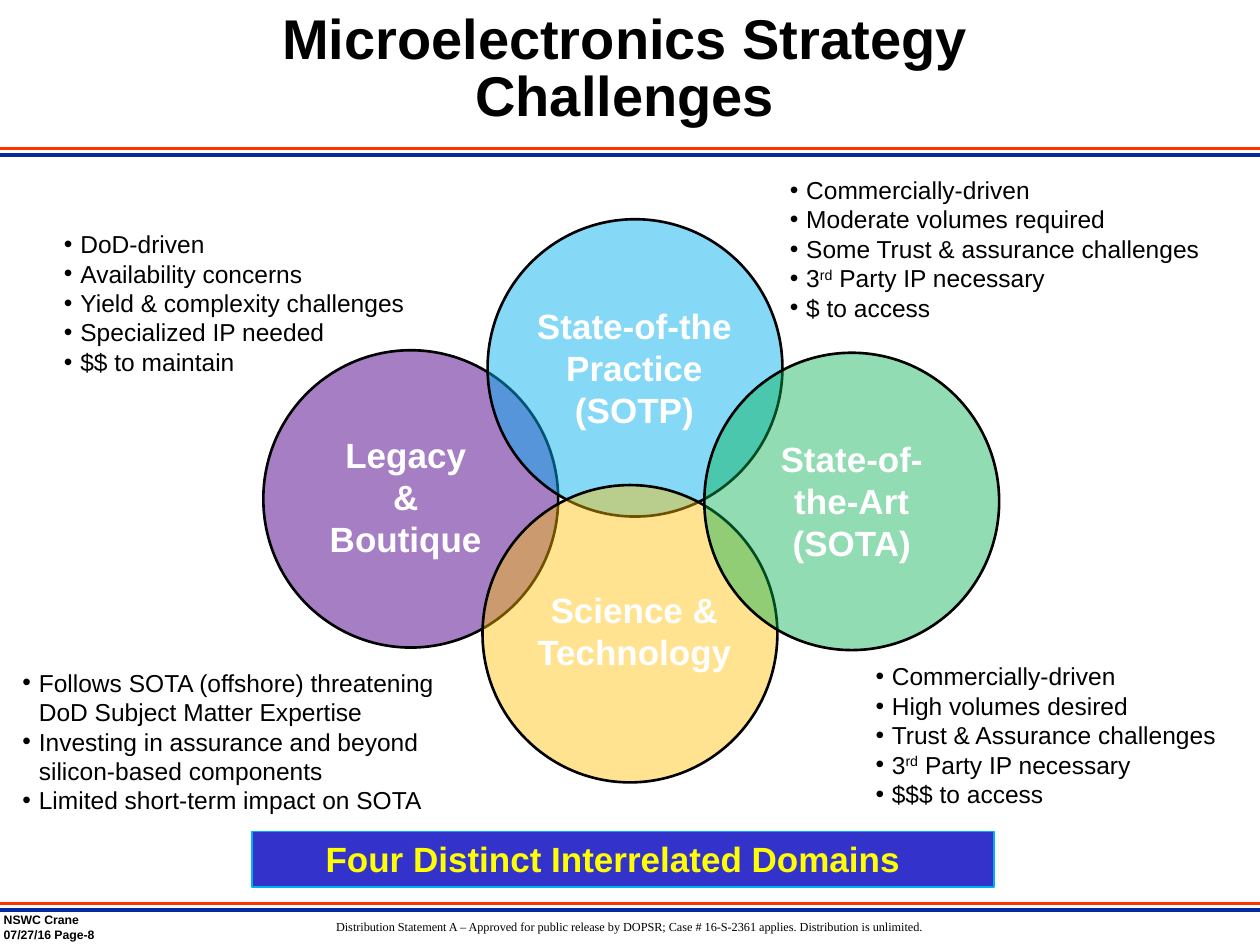
"""Build the microelectronics strategy challenges slide."""
from dataclasses import dataclass
from typing import NamedTuple

from lxml import etree
from pptx import Presentation
from pptx.dml.color import RGBColor
from pptx.enum.shapes import MSO_CONNECTOR, MSO_SHAPE
from pptx.enum.text import MSO_ANCHOR, PP_ALIGN
from pptx.oxml.ns import qn
from pptx.util import Inches, Pt

STRAIGHT = MSO_CONNECTOR.STRAIGHT
OVAL, RECTANGLE = MSO_SHAPE.OVAL, MSO_SHAPE.RECTANGLE
TOP, MIDDLE = MSO_ANCHOR.TOP, MSO_ANCHOR.MIDDLE
LEFT, CENTER = PP_ALIGN.LEFT, PP_ALIGN.CENTER


@dataclass(frozen=True)
class Theme:
    """Hold the colours, fonts and type sizes of the slide."""
    black: str = "000000"
    white: str = "FFFFFF"
    blue_rule: str = "032AA1"
    red_rule: str = "FF3300"
    purple: str = "7030A0"
    sky: str = "00B0F0"
    gold: str = "FFC000"
    green: str = "00B050"
    banner: str = "3333CC"
    yellow: str = "FFFF00"
    sans: str = "Arial"
    serif: str = "Times New Roman"
    title_size: int = 32
    label_size: int = 20
    bullet_size: int = 14
    footer_size: int = 7


THEME = Theme()


class Box(NamedTuple):
    """Describe a rectangle in inches."""
    left: float
    top: float
    width: float
    height: float


class Style(NamedTuple):
    """Describe how a text is set."""
    size: int
    color: str
    bold: bool = False
    align: PP_ALIGN = LEFT
    font: str = THEME.sans


class Domain(NamedTuple):
    """Describe one circle and its label."""
    left: float
    top: float
    color: str
    opacity: int
    label_box: Box
    label: tuple


class BulletList(NamedTuple):
    """Describe a bulleted list, with superscripts between carets."""
    box: Box
    items: tuple


CIRCLE_WIDTH, CIRCLE_HEIGHT = 2.34, 2.36
BULLET_INDENT = 0.13

TITLE_STYLE = Style(THEME.title_size, THEME.black, True, CENTER)
LABEL_STYLE = Style(THEME.label_size, THEME.white, True, CENTER)
BULLET_STYLE = Style(THEME.bullet_size, THEME.black)
BANNER_STYLE = Style(THEME.label_size, THEME.yellow, True, CENTER)
PAGE_STYLE = Style(THEME.footer_size, THEME.black, True)
STATEMENT_STYLE = Style(THEME.footer_size, THEME.black, False, CENTER, THEME.serif)

DOMAINS = (
    Domain(2.09, 2.78, THEME.purple, 62, Box(2.43, 3.39, 1.58, 1.15),
           ("Legacy", "& Boutique")),
    Domain(3.87, 1.74, THEME.sky, 48, Box(4.03, 2.37, 2.01, 1.11),
           ("State-of-the Practice (SOTP)",)),
    Domain(3.83, 3.85, THEME.gold, 43, Box(4.03, 4.62, 2.01, 0.79),
           ("Science &", "Technology")),
    Domain(5.59, 2.8, THEME.green, 43, Box(5.96, 3.42, 1.6, 1.11),
           ("State-of-the-Art (SOTA)",)),
)

BULLET_LISTS = (
    BulletList(Box(0.41, 1.77, 3.86, 1.51), (
        "DoD-driven", "Availability concerns", "Yield & complexity challenges",
        "Specialized IP needed", "$$ to maintain")),
    BulletList(Box(0.08, 5.25, 3.59, 1.28), (
        "Follows SOTA (offshore) threatening DoD Subject Matter Expertise",
        "Investing in assurance and beyond silicon-based components",
        "Limited short-term impact on SOTA")),
    BulletList(Box(6.85, 5.2, 3.88, 1.51), (
        "Commercially-driven", "High volumes desired",
        "Trust & Assurance challenges", "3^rd^ Party IP necessary",
        "$$$ to access")),
    BulletList(Box(6.17, 1.34, 3.88, 1.51), (
        "Commercially-driven", "Moderate volumes required",
        "Some Trust & assurance challenges", "3^rd^ Party IP necessary",
        "$ to access")),
)


def inches(box: Box) -> list:
    """Convert a box to lengths."""
    return [Inches(value) for value in box]


def add_bullet(paragraph) -> None:
    """Give a paragraph a hanging bullet."""
    properties = paragraph._p.get_or_add_pPr()
    properties.set("marL", str(Inches(BULLET_INDENT)))
    properties.set("indent", str(-Inches(BULLET_INDENT)))
    etree.SubElement(properties, qn("a:buFont")).set("typeface", THEME.sans)
    etree.SubElement(properties, qn("a:buChar")).set("char", "•")


def write_text(shape, texts: tuple, style: Style, anchor=TOP, bulleted: bool = False) -> None:
    """Write one paragraph per text into a shape."""
    frame = shape.text_frame
    frame.word_wrap = True
    frame.vertical_anchor = anchor
    for index, text in enumerate(texts):
        paragraph = frame.add_paragraph() if index else frame.paragraphs[0]
        paragraph.alignment = style.align
        if bulleted:
            add_bullet(paragraph)
        for part_index, part in enumerate(text.split("^")):
            run = paragraph.add_run()
            run.text = part
            run.font.name = style.font
            run.font.size = Pt(style.size)
            run.font.bold = style.bold
            run.font.color.rgb = RGBColor.from_string(style.color)
            if part_index % 2:
                run._r.get_or_add_rPr().set("baseline", "30000")


def add_text(slide, box: Box, texts: tuple, style: Style, bulleted: bool = False):
    """Add a text box."""
    shape = slide.shapes.add_textbox(*inches(box))
    write_text(shape, texts, style, bulleted=bulleted)
    return shape


def add_filled(slide, kind, box: Box, fill: str, line: str = "", line_width: float = 0):
    """Add a preset shape with a fill and an optional outline."""
    shape = slide.shapes.add_shape(kind, *inches(box))
    shape.shadow.inherit = False
    shape.fill.solid()
    shape.fill.fore_color.rgb = RGBColor.from_string(fill)
    if line:
        shape.line.color.rgb = RGBColor.from_string(line)
        shape.line.width = Pt(line_width)
    else:
        shape.line.fill.background()
    return shape


def add_rule(slide, top: float, color: str, width: float) -> None:
    """Add a horizontal rule across the slide."""
    rule = slide.shapes.add_connector(STRAIGHT, 0, Inches(top), Inches(10), Inches(top))
    rule.line.color.rgb = RGBColor.from_string(color)
    rule.line.width = Pt(width)
    etree.SubElement(rule._element.spPr, qn("a:effectLst"))


def add_domain(slide, domain: Domain) -> None:
    """Add a translucent circle and its label."""
    box = Box(domain.left, domain.top, CIRCLE_WIDTH, CIRCLE_HEIGHT)
    circle = add_filled(slide, OVAL, box, domain.color, THEME.black, 1.5)
    color = circle._element.spPr.find(qn("a:solidFill"))[0]
    etree.SubElement(color, qn("a:alpha")).set("val", str(domain.opacity * 1000))
    add_text(slide, domain.label_box, domain.label, LABEL_STYLE)


def add_title(slide) -> None:
    """Place and format the title."""
    title = slide.shapes.title
    title.left, title.top, title.width, title.height = inches(Box(1.13, 0, 7.66, 1.12))
    write_text(title, ("Microelectronics Strategy Challenges",), TITLE_STYLE, MIDDLE)
    title.text_frame.paragraphs[0].line_spacing = 0.85


def main() -> None:
    """Build and save the presentation."""
    presentation = Presentation()
    presentation.slide_width, presentation.slide_height = Inches(10), Inches(7.5)
    slide = presentation.slides.add_slide(presentation.slide_layouts[5])
    add_title(slide)
    for red_top in (1.18, 7.17):
        add_rule(slide, red_top + 0.05, THEME.blue_rule, 2.25)
        add_rule(slide, red_top, THEME.red_rule, 2)
    page = add_text(slide, Box(0.03, 7.19, 2.06, 0.34),
                    ("NSWC Crane", "07/27/16 Page-8"), PAGE_STYLE)
    page.text_frame.margin_left = 0
    statement = add_filled(slide, RECTANGLE, Box(1.37, 7.25, 7.25, 0.22), THEME.white)
    write_text(statement, (
        "Distribution Statement A – Approved for public release by DOPSR; "
        "Case # 16-S-2361 applies. Distribution is unlimited.",), STATEMENT_STYLE)
    for domain in DOMAINS:
        add_domain(slide, domain)
    for bullet_list in BULLET_LISTS:
        add_text(slide, bullet_list.box, bullet_list.items, BULLET_STYLE, bulleted=True)
    banner = add_filled(slide, RECTANGLE, Box(2, 6.6, 5.89, 0.44),
                        THEME.banner, THEME.sky, 0.75)
    write_text(banner, ("Four Distinct Interrelated Domains",), BANNER_STYLE)
    banner.text_frame.margin_right = Inches(0.26)
    presentation.save("out.pptx")


if __name__ == "__main__":
    main()
